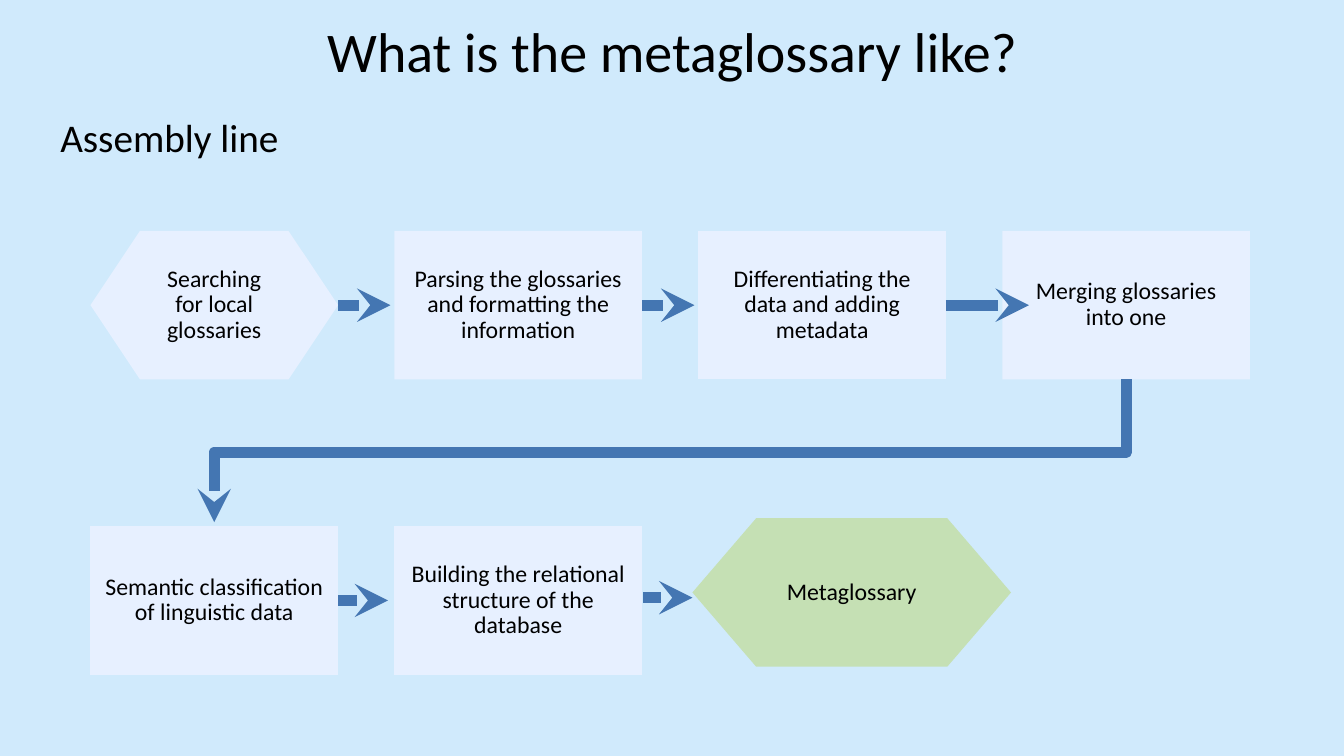
from dataclasses import dataclass

from lxml.etree import SubElement
from pptx import Presentation
from pptx.dml.color import RGBColor as Rgb
from pptx.enum.shapes import MSO_CONNECTOR as Connector, MSO_SHAPE as Preset
from pptx.enum.text import MSO_ANCHOR as Anchor, MSO_AUTO_SIZE as AutoSize, PP_ALIGN as Align
from pptx.oxml.ns import qn
from pptx.util import Cm, Pt


@dataclass(frozen=True)
class Theme:
    font: str = "Calibri"
    background: Rgb = Rgb(0xD0, 0xEA, 0xFC)
    step: Rgb = Rgb(0xE7, 0xF0, 0xFF)
    result: Rgb = Rgb(0xC5, 0xE0, 0xB4)
    arrow: Rgb = Rgb(0x44, 0x76, 0xB2)
    text: Rgb = Rgb(0, 0, 0)
    title_size: int = 40
    subtitle_size: int = 28
    step_size: int = 17
    arrow_width: int = 8


class FlowSlide:
    """Draws the elements of a process slide in one theme."""

    def __init__(self, presentation, theme):
        self.theme = theme
        self.slide = presentation.slides.add_slide(presentation.slide_layouts[5])
        fill = self.slide.background.fill
        fill.solid()
        fill.fore_color.rgb = theme.background

    def add_text(self, frame, text, size, align, anchor):
        frame.word_wrap = True
        frame.auto_size = AutoSize.NONE
        frame.vertical_anchor = anchor
        paragraph = frame.paragraphs[0]
        paragraph.alignment = align
        run = paragraph.add_run()
        run.text = text
        run.font.name = self.theme.font
        run.font.size = Pt(size)
        run.font.color.rgb = self.theme.text
        return paragraph

    def title(self, text, left, top, width, height):
        shape = self.slide.shapes.title
        shape.left, shape.top, shape.width, shape.height = map(Cm, (left, top, width, height))
        self.add_text(shape.text_frame, text, self.theme.title_size, Align.CENTER, Anchor.TOP)

    def subtitle(self, text, left, top, width, height):
        shape = self.slide.shapes.add_textbox(*map(Cm, (left, top, width, height)))
        self.add_text(shape.text_frame, text, self.theme.subtitle_size, Align.LEFT, Anchor.TOP)

    def box(self, preset, text, color, left, top, width, height):
        shape = self.slide.shapes.add_shape(preset, *map(Cm, (left, top, width, height)))
        shape.shadow.inherit = False
        shape.fill.solid()
        shape.fill.fore_color.rgb = color
        shape.line.fill.background()
        frame = shape.text_frame
        frame.margin_left = frame.margin_right = Cm(0.33)
        frame.margin_top = frame.margin_bottom = Cm(0.33)
        paragraph = self.add_text(frame, text, self.theme.step_size, Align.CENTER, Anchor.MIDDLE)
        paragraph.line_spacing = 0.9
        return shape

    def style_arrow(self, shape):
        shape.line.color.rgb = self.theme.arrow
        shape.line.width = Pt(self.theme.arrow_width)
        element = shape._element.spPr.find(qn("a:ln"))
        SubElement(element, qn("a:round"))
        SubElement(element, qn("a:tailEnd"), type="stealth")

    def arrow(self, left, right, y, source=None):
        connector = self.slide.shapes.add_connector(
            Connector.STRAIGHT, Cm(left), Cm(y), Cm(right), Cm(y))
        if source is not None:
            connector.begin_connect(source, 3)
        self.style_arrow(connector)
        SubElement(connector._element.spPr, qn("a:effectLst"))

    def bent_arrow(self, points):
        start, *rest = [(Cm(x), Cm(y)) for x, y in points]
        builder = self.slide.shapes.build_freeform(*start)
        builder.add_line_segments(rest, close=False)
        shape = builder.convert_to_shape()
        shape.fill.background()
        self.style_arrow(shape)
        shape.shadow.inherit = False


def main():
    theme = Theme()
    presentation = Presentation()
    presentation.slide_width, presentation.slide_height = Cm(33.87), Cm(19.05)
    flow = FlowSlide(presentation, theme)
    flow.title("What is the metaglossary like?", 5.33, 0.3, 23.22, 1.96)
    flow.subtitle("Assembly line", 1.27, 2.72, 7.19, 1.45)

    first_left, pitch, width, height = 2.28, 7.66, 6.24, 3.74
    rows = [
        (5.82, [
            (Preset.FLOWCHART_PREPARATION, "Searching for local glossaries", 1.32),
            (Preset.RECTANGLE, "Parsing the glossaries and formatting the information", 1.32),
            (Preset.FLOWCHART_PROCESS, "Differentiating the data and adding metadata", 2.09),
            (Preset.RECTANGLE, "Merging glossaries into one", None),
        ]),
        (13.26, [
            (Preset.FLOWCHART_PROCESS, "Semantic classification of linguistic data", 1.26),
            (Preset.FLOWCHART_PROCESS, "Building the relational structure of the database", None),
        ]),
    ]
    for top, steps in rows:
        lefts = [first_left + column * pitch for column in range(len(steps))]
        boxes = [flow.box(preset, text, theme.step, left, top, width, height)
                 for left, (preset, text, _) in zip(lefts, steps)]
        for left, box, (_, _, length) in zip(lefts, boxes, steps):
            if length:
                right = left + width
                flow.arrow(right, right + length, top + height / 2, box)

    flow.box(Preset.FLOWCHART_PREPARATION, "Metaglossary", theme.result, 17.45, 13.06, 8.03, height)
    flow.arrow(16.21, 17.45, 15.06)
    first_center = first_left + width / 2
    last_center = first_center + 3 * pitch
    flow.bent_arrow([(last_center, 9.56), (last_center, 11.4),
                     (first_center, 11.4), (first_center, 13.16)])
    presentation.save("out.pptx")


if __name__ == "__main__":
    main()
